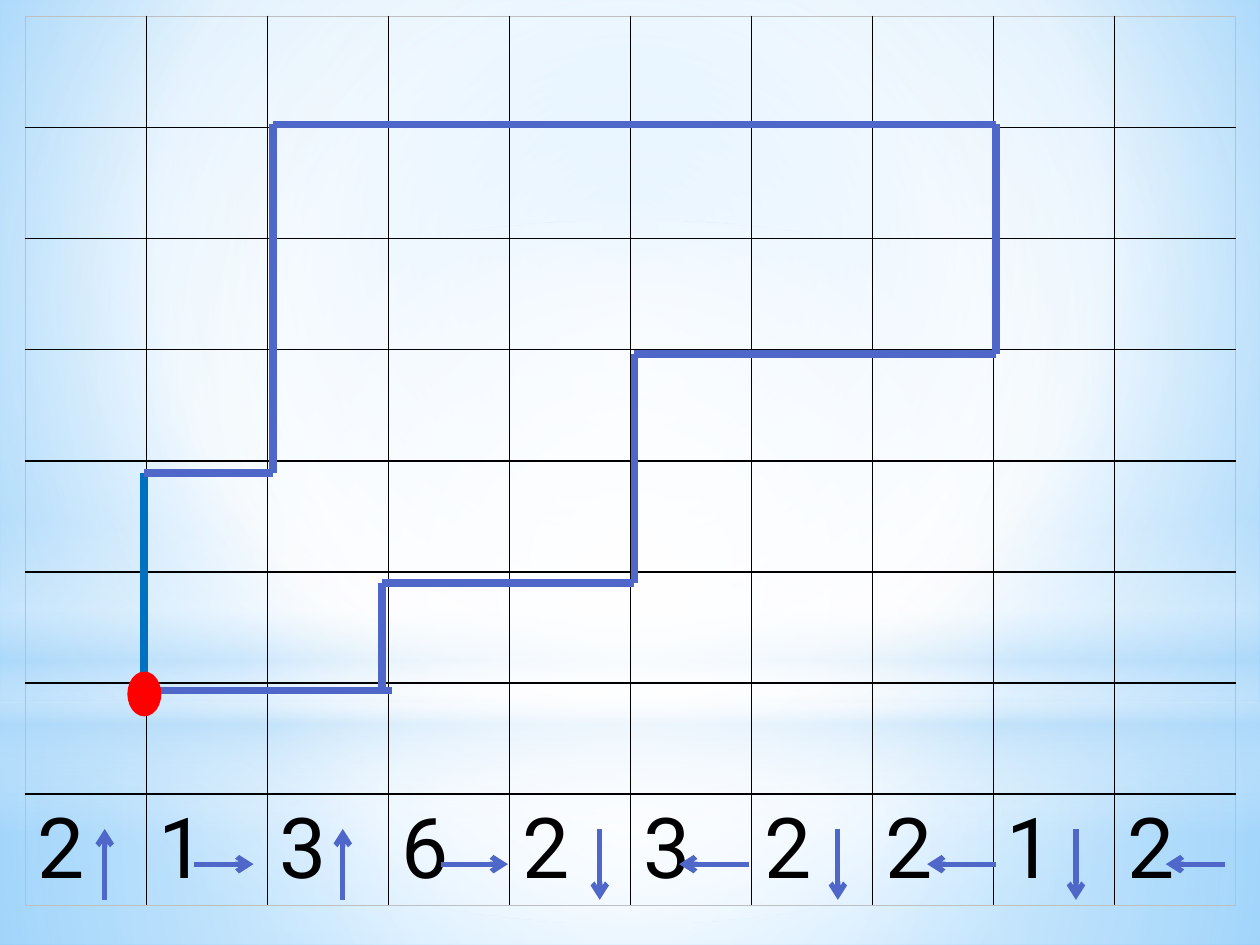
from lxml import etree
from pptx import Presentation
from pptx.dml.color import RGBColor
from pptx.enum.shapes import MSO_CONNECTOR, MSO_SHAPE
from pptx.oxml import parse_xml
from pptx.oxml.ns import nsdecls, qn
from pptx.util import Cm, Pt

STRAIGHT = MSO_CONNECTOR.STRAIGHT
RECTANGLE = MSO_SHAPE.RECTANGLE
OVAL = MSO_SHAPE.OVAL

THEME = {
    "route": "4E67C8", "first": "0070C0", "start": "FF0000", "ink": "000000",
    "edge": "BFBFBF", "font": "Roboto", "number": 48,
    "route_width": 4.5, "arrow_width": 3, "grid_width": 1, "start_width": 1.25,
}
WHITE, SKY = "FFFFFF", "B4DCFA"
CENTRE = (50, 50, 50, 50)

BACKDROP = ([(0, "9ED5FF", 100), (60, WHITE, 100), (100, "5BB9FF", 100)], (20, 10, 20, 60))
GLOWS = [
    (RECTANGLE, (0, 14.17, 25.4, 4.88), [(0, WHITE, 91), (37, WHITE, 76), (100, SKY, 79)], CENTRE),
    (RECTANGLE, (0, 0, 25.4, 14.17), [(0, WHITE, 89), (48, WHITE, 62), (100, SKY, 79)], CENTRE),
    (RECTANGLE, (0, 10.46, 25.4, 6.35),
     [(0, WHITE, 0), (29, WHITE, 30), (45, SKY, 40), (55, WHITE, 26), (65, SKY, 60), (100, WHITE, 0)], None),
    (OVAL, (0, 4.45, 25.4, 14.17), [(0, WHITE, 100), (56, WHITE, 0)], CENTRE),
]

ROWS, COLUMNS = 8, 10
GRID_LEFT, GRID_TOP, CELL_WIDTH, CELL_HEIGHT = 0.51, 0.33, 2.44, 2.24

CORNERS = [
    (2.9, 13.92), (2.9, 9.53), (5.51, 9.53), (5.51, 2.51), (20.07, 2.51),
    (20.07, 7.14), (12.79, 7.14), (12.79, 11.75), (7.7, 11.75), (7.7, 13.92),
]
CLOSING = ((7.9, 13.92), (3.1, 13.92))
START = (2.59, 13.56, 0.64, 0.86)

HIGH, MIDDLE, LOW = 16.71, 17.42, 18.14
COMMANDS = [
    ("2", (2.11, LOW), (2.11, HIGH)),
    ("1", (3.91, MIDDLE), (5.11, MIDDLE)),
    ("3", (6.91, LOW), (6.91, HIGH)),
    ("6", (8.89, MIDDLE), (10.24, MIDDLE)),
    ("2", (12.09, HIGH), (12.09, LOW)),
    ("3", (15.09, MIDDLE), (13.69, MIDDLE)),
    ("2", (16.89, HIGH), (16.89, LOW)),
    ("2", (20.07, MIDDLE), (18.69, MIDDLE)),
    ("1", (21.69, HIGH), (21.69, LOW)),
    ("2", (24.69, MIDDLE), (23.5, MIDDLE)),
]


def gradient(stops, focus):
    marks = "".join(
        f'<a:gs pos="{place * 1000}"><a:srgbClr val="{color}">'
        f'<a:alpha val="{opacity * 1000}"/></a:srgbClr></a:gs>'
        for place, color, opacity in stops)
    if focus:
        sides = " ".join(f'{side}="{value * 1000}"' for side, value in zip("ltrb", focus))
        direction = f'<a:path path="circle"><a:fillToRect {sides}/></a:path>'
    else:
        direction = '<a:lin ang="5400000" scaled="0"/>'
    return parse_xml(f'<a:gradFill {nsdecls("a")} rotWithShape="1">'
                     f'<a:gsLst>{marks}</a:gsLst>{direction}</a:gradFill>')


def swap_fill(properties, stops, focus):
    plain = properties.find(qn("a:solidFill"))
    properties.replace(plain, gradient(stops, focus))


def add_shape(page, kind, place):
    shape = page.shapes.add_shape(kind, *map(Cm, place))
    shape.shadow.inherit = False
    shape.fill.solid()
    return shape


def add_line(page, start, end, color, width, arrow=False):
    line = page.shapes.add_connector(STRAIGHT, *map(Cm, start + end))
    line.line.color.rgb = RGBColor.from_string(color)
    line.line.width = Pt(width)
    properties = line._element.spPr
    if arrow:
        etree.SubElement(properties.find(qn("a:ln")), qn("a:tailEnd"), type="arrow")
    etree.SubElement(properties, qn("a:effectLst"))


def set_borders(cell, row, column):
    outer = {"lnL": column == 0, "lnR": column == COLUMNS - 1,
             "lnT": row == 0, "lnB": row == ROWS - 1}
    properties = cell._tc.get_or_add_tcPr()
    for index, (side, is_edge) in enumerate(outer.items()):
        color = THEME["edge"] if is_edge else THEME["ink"]
        properties.insert(index, parse_xml(
            f'<a:{side} {nsdecls("a")} w="{Pt(THEME["grid_width"])}"><a:solidFill>'
            f'<a:srgbClr val="{color}"/></a:solidFill></a:{side}>'))


def add_grid(page):
    table = page.shapes.add_table(
        ROWS, COLUMNS, Cm(GRID_LEFT), Cm(GRID_TOP),
        Cm(CELL_WIDTH * COLUMNS), Cm(CELL_HEIGHT * ROWS)).table
    table.first_row = table.horz_banding = False
    for column in table.columns:
        column.width = Cm(CELL_WIDTH)
    for row_index, row in enumerate(table.rows):
        row.height = Cm(CELL_HEIGHT)
        for column_index, cell in enumerate(row.cells):
            cell.fill.background()
            set_borders(cell, row_index, column_index)
    for column_index, (count, _, _) in enumerate(COMMANDS):
        cell = table.cell(ROWS - 1, column_index)
        cell.text = count
        font = cell.text_frame.paragraphs[0].font
        font.name = THEME["font"]
        font.size = Pt(THEME["number"])
        font.color.rgb = RGBColor.from_string(THEME["ink"])


def main():
    deck = Presentation()
    deck.slide_width, deck.slide_height = Cm(25.4), Cm(19.05)
    page = deck.slides.add_slide(deck.slide_layouts[6])

    page.background.fill.solid()
    swap_fill(page._element.find(".//" + qn("p:bgPr")), *BACKDROP)
    for kind, place, stops, focus in GLOWS:
        glow = add_shape(page, kind, place)
        glow.line.fill.background()
        swap_fill(glow._element.spPr, stops, focus)

    add_grid(page)

    strokes = list(zip(CORNERS, CORNERS[1:])) + [CLOSING]
    for index, (start, end) in enumerate(strokes):
        color = THEME["route"] if index else THEME["first"]
        add_line(page, start, end, color, THEME["route_width"])

    dot = add_shape(page, OVAL, START)
    dot.fill.fore_color.rgb = dot.line.color.rgb = RGBColor.from_string(THEME["start"])
    dot.line.width = Pt(THEME["start_width"])

    for _, start, end in COMMANDS:
        add_line(page, start, end, THEME["route"], THEME["arrow_width"], arrow=True)

    deck.save("out.pptx")


if __name__ == "__main__":
    main()
